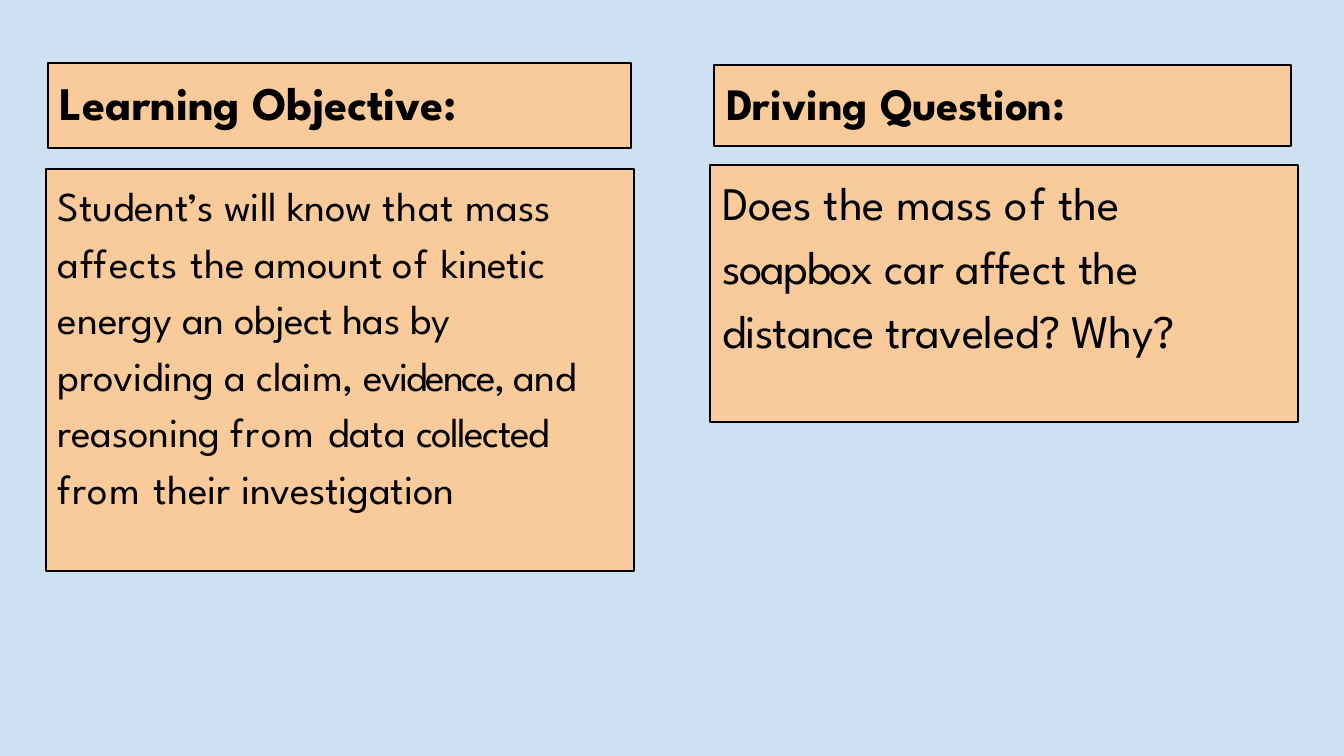
from pptx import Presentation
from pptx.dml.color import RGBColor
from pptx.enum.shapes import MSO_SHAPE
from pptx.enum.text import MSO_ANCHOR, PP_ALIGN
from pptx.util import Pt

PX = 914400 / 134.4
WIDTH, HEIGHT = 1344, 756
FONT = "League Spartan"
SKY, PEACH, BLACK = "CEE1F3", "F9CB9B", "000000"

# Each piece of text comes with its letter spacing in points.
OBJECTIVE_TITLE = [("Learning ", 0), ("Objective:", -0.1)]
OBJECTIVE = [
    ("Student’s will ", 0), ("know ", -0.1), ("that ", 0.4), ("mass ", 0),
    ("affects ", 0.6), ("the amount ", 0), ("of ", 0.9), ("kinetic ", -0.2),
    ("energy an ", 0), ("object ", -0.3), ("has ", -0.2), ("by ", 0),
    ("providing ", -0.1), ("a ", 0), ("claim, ", -0.1), ("evidence, ", -1.1),
    ("and reasoning ", -0.1), ("from ", 1), ("data ", 0), ("collected ", -0.8),
    ("from ", 0.8), ("their ", 0), ("investigation", -0.1),
]
QUESTION_TITLE = [("Driving ", 0), ("Question:", -0.1)]
QUESTION = [
    ("Does the mass ", 0), ("of", 1.2), (" the ", -0.2), ("soapbox ", -0.8),
    ("car affect ", 0), ("the ", -0.2), ("distance ", -0.4),
    ("traveled? Why?", -0.2),
]


def px(length):
    return round(length * PX)


def paint(color_format, color):
    color_format.rgb = RGBColor.from_string(color)


def add_panel(slide, box, color):
    panel = slide.shapes.add_shape(MSO_SHAPE.RECTANGLE, *map(px, box))
    panel.shadow.inherit = False
    panel.fill.solid()
    paint(panel.fill.fore_color, color)
    panel.line.fill.background()
    return panel


def add_card(slide, box, pieces, size, inset, before, leading=1.0, bold=False):
    """Draw an outlined box with one paragraph of individually spaced pieces."""
    card = add_panel(slide, box, PEACH)
    card.line.fill.solid()
    paint(card.line.fill.fore_color, BLACK)
    card.line.width = Pt(0.75)

    frame = card.text_frame
    frame.word_wrap = True
    frame.vertical_anchor = MSO_ANCHOR.TOP
    frame.margin_left = frame.margin_right = frame.margin_bottom = 0
    frame.margin_top = px(inset)

    paragraph = frame.paragraphs[0]
    paragraph.alignment = PP_ALIGN.LEFT
    paragraph.space_before = Pt(before)
    paragraph.line_spacing = leading
    indents = paragraph._p.get_or_add_pPr()
    indents.set("marL", str(px(12)))
    indents.set("marR", str(px(35)))
    for text, spacing in pieces:
        run = paragraph.add_run()
        run.text = text
        run.font.name = FONT
        run.font.size = Pt(size)
        run.font.bold = bold
        paint(run.font.color, BLACK)
        run.font._element.set("spc", str(round(spacing * 100)))
        run.font._element.set("kern", "0")


def add_objective(slide, left, top):
    add_card(slide, (left + 2, top, 583, 85), OBJECTIVE_TITLE, 25, 11, 6,
             bold=True)
    add_card(slide, (left, top + 106, 588, 402), OBJECTIVE, 22, 4, 1.8, 1.15)


def add_question(slide, left, top):
    add_card(slide, (left, top + 100, 588, 257), QUESTION, 25, 1, 1.2, 1.14)
    add_card(slide, (left + 4, top, 577, 81), QUESTION_TITLE, 24, 11, 5.8,
             bold=True)


def main():
    deck = Presentation()
    deck.slide_width, deck.slide_height = px(WIDTH), px(HEIGHT)
    slide = deck.slides.add_slide(deck.slide_layouts[6])
    add_panel(slide, (0, 0, WIDTH, HEIGHT), SKY)
    add_objective(slide, 46, 63)
    add_question(slide, 710, 65)
    deck.save("out.pptx")


if __name__ == "__main__":
    main()
